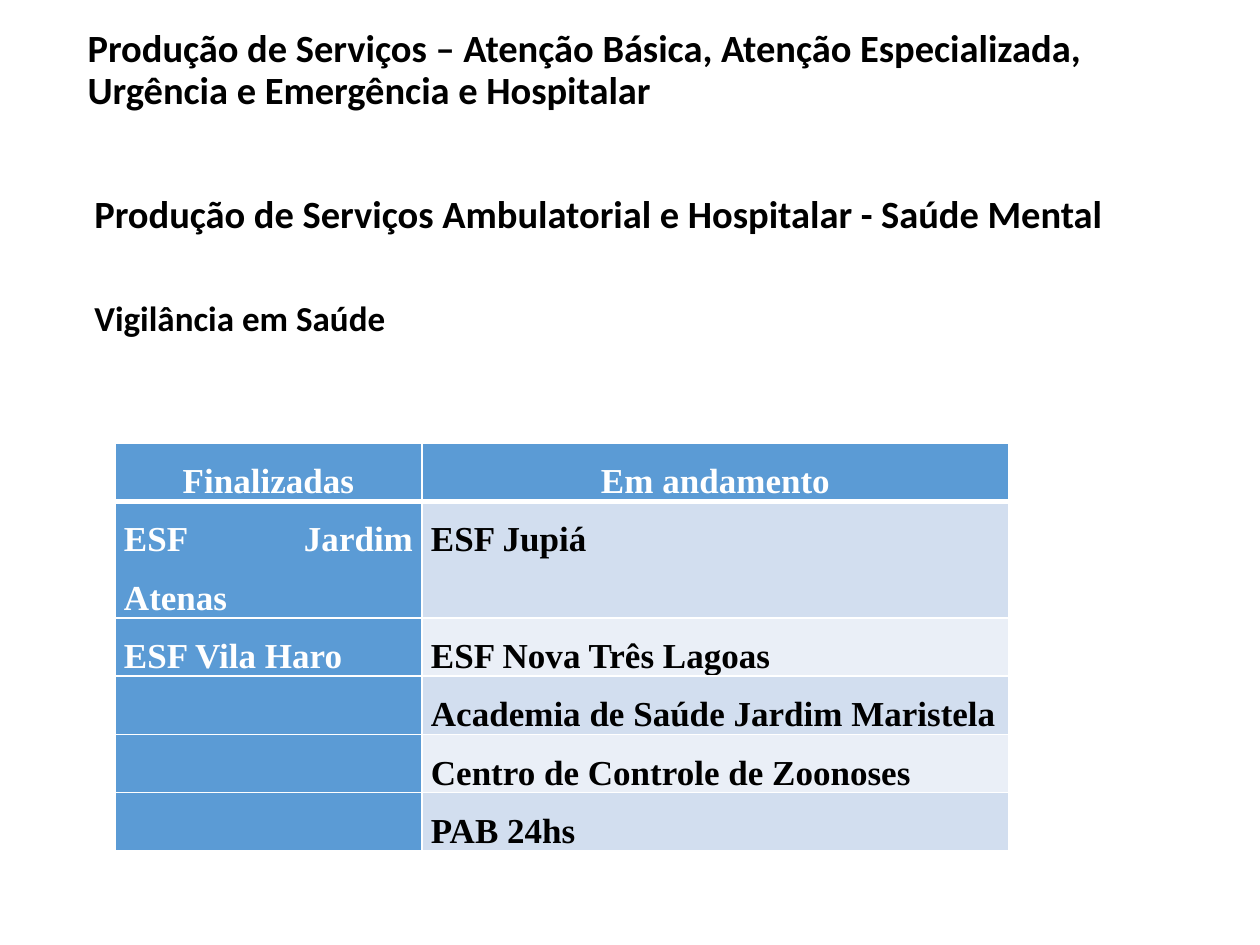
from dataclasses import dataclass

from lxml.etree import SubElement
from pptx import Presentation
from pptx.dml.color import RGBColor as Color
from pptx.enum.text import MSO_ANCHOR as Anchor, MSO_AUTO_SIZE as AutoSize, PP_ALIGN as Align
from pptx.oxml.ns import qn
from pptx.util import Pt

PX = 914400 / 126


@dataclass(frozen=True)
class Theme:
    heading_font: str = "Calibri"
    table_font: str = "Times New Roman"
    heading_size: int = 22
    body_size: int = 20
    black: str = "000000"
    white: str = "FFFFFF"
    blue: str = "5B9BD5"
    bands: tuple = ("D2DEEF", "EAEFF7")


theme = Theme()


def px(value):
    return round(value * PX)


def add_run(paragraph, text, font_name, size, color):
    run = paragraph.add_run()
    run.text = text
    run.font.name = font_name
    run.font.size = Pt(size)
    run.font.bold = True
    run.font.color.rgb = Color.from_string(color)


presentation = Presentation()
presentation.slide_width = px(1260)
presentation.slide_height = px(945)
slide = presentation.slides.add_slide(presentation.slide_layouts[5])

# Headings: shape, box, bottom inset, anchor, line spacing, size, text
title = slide.shapes.title
production_box = slide.shapes.add_textbox(0, 0, 0, 0)
surveillance_box = slide.shapes.add_textbox(0, 0, 0, 0)
headings = [
    (title, (75, 48, 1123, 87), 47, Anchor.MIDDLE, 0.9, theme.heading_size,
     "Produção de Serviços – Atenção Básica, Atenção Especializada, "
     "Urgência e Emergência e Hospitalar"),
    (production_box, (82, 175, 1134, 117), 47, Anchor.MIDDLE, 1.0, theme.heading_size,
     "Produção de Serviços Ambulatorial e Hospitalar - Saúde Mental"),
    (surveillance_box, (82, 290, 1134, 81), 6, Anchor.TOP, 1.0, theme.body_size,
     "Vigilância em Saúde"),
]
for shape, box, bottom_inset, anchor, spacing, size, text in headings:
    shape.left, shape.top, shape.width, shape.height = map(px, box)
    frame = shape.text_frame
    frame.word_wrap = True
    frame.auto_size = AutoSize.NONE
    frame.vertical_anchor = anchor
    frame.margin_bottom = px(bottom_inset)
    paragraph = frame.paragraphs[0]
    paragraph.alignment = Align.LEFT
    paragraph.line_spacing = spacing
    add_run(paragraph, text, theme.heading_font, size, theme.black)

# Works table
works = [
    ("Finalizadas", "Em andamento"),
    ("ESF Jardim Atenas", "ESF Jupiá"),
    ("ESF Vila Haro", "ESF Nova Três Lagoas"),
    ("", "Academia de Saúde Jardim Maristela"),
    ("", "Centro de Controle de Zoonoses"),
    ("", "PAB 24hs"),
]
column_widths = [307, 587]
row_heights = [58, 116, 58, 58, 58, 58]
table = slide.shapes.add_table(
    len(works), len(column_widths), px(115), px(443),
    px(sum(column_widths)), px(sum(row_heights))).table
for column, width in zip(table.columns, column_widths):
    column.width = px(width)
for row, height in zip(table.rows, row_heights):
    row.height = px(height)

for row_index, row_texts in enumerate(works):
    for column_index, text in enumerate(row_texts):
        cell = table.cell(row_index, column_index)
        is_header = row_index == 0
        is_blue = is_header or column_index == 0
        cell.margin_left = cell.margin_right = px(9)
        cell.margin_top = cell.margin_bottom = 0

        properties = cell._tc.get_or_add_tcPr()
        for side in ("L", "R", "T", "B"):
            thick = (row_index, side) in ((0, "B"), (1, "T"))
            border = SubElement(properties, qn(f"a:ln{side}"), w=str(Pt(3 if thick else 1)))
            fill = SubElement(border, qn("a:solidFill"))
            SubElement(fill, qn("a:srgbClr"), val=theme.white)
        cell.fill.solid()
        cell.fill.fore_color.rgb = Color.from_string(
            theme.blue if is_blue else theme.bands[(row_index - 1) % 2])

        if text:
            paragraph = cell.text_frame.paragraphs[0]
            paragraph.alignment = Align.CENTER if is_header else Align.JUSTIFY
            paragraph.line_spacing = 1.5
            add_run(paragraph, text, theme.table_font, theme.body_size,
                    theme.white if is_blue else theme.black)

presentation.save("out.pptx")
